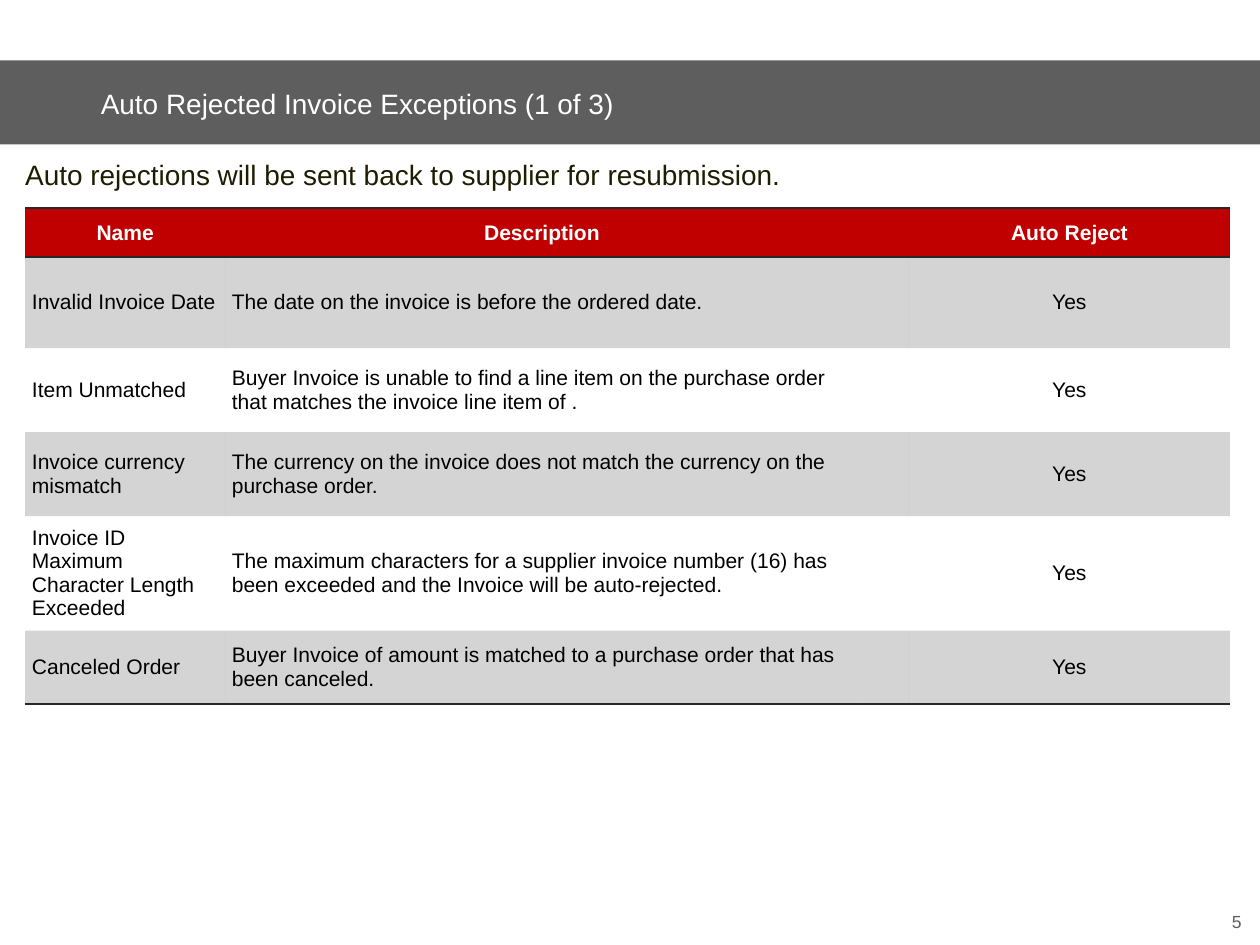
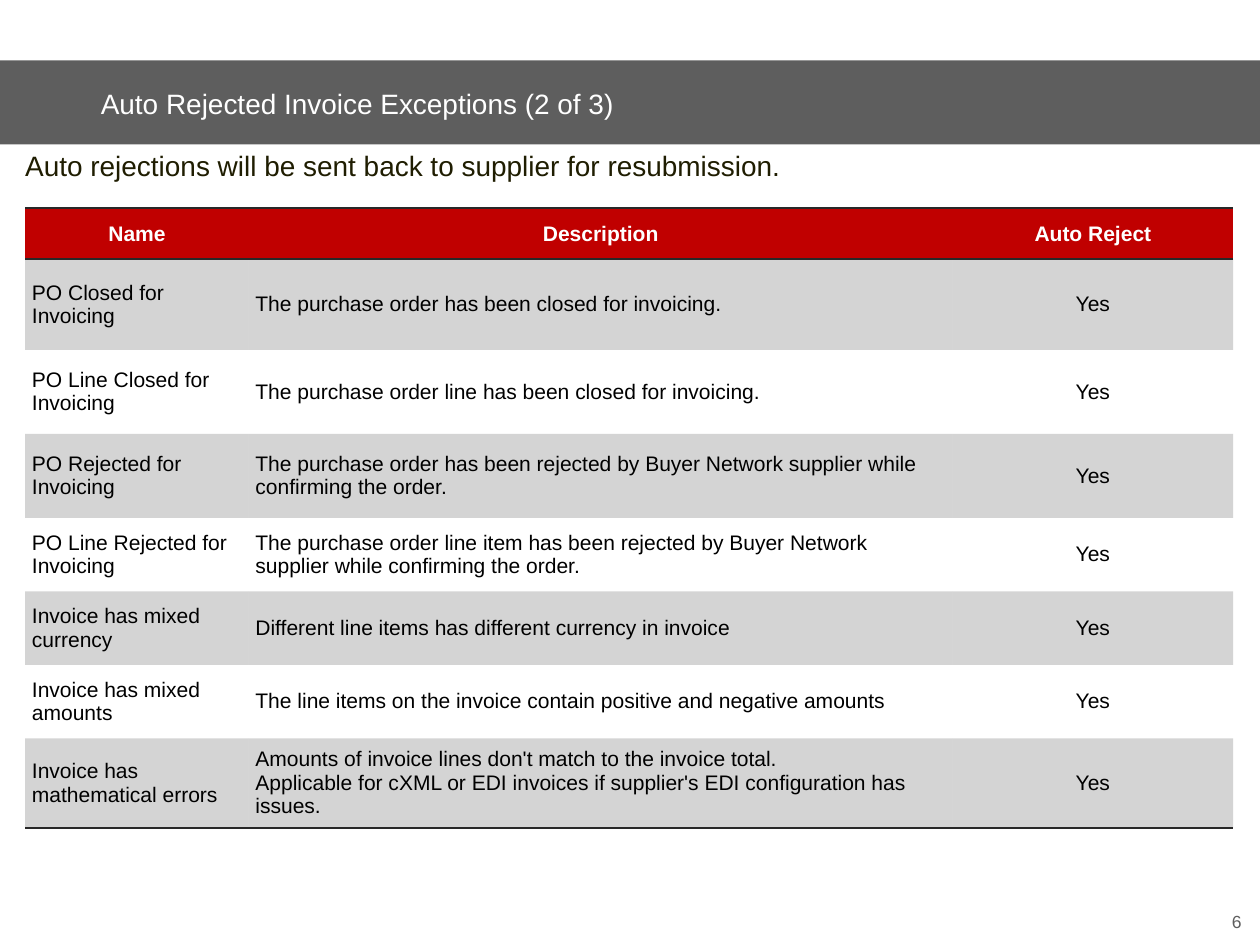
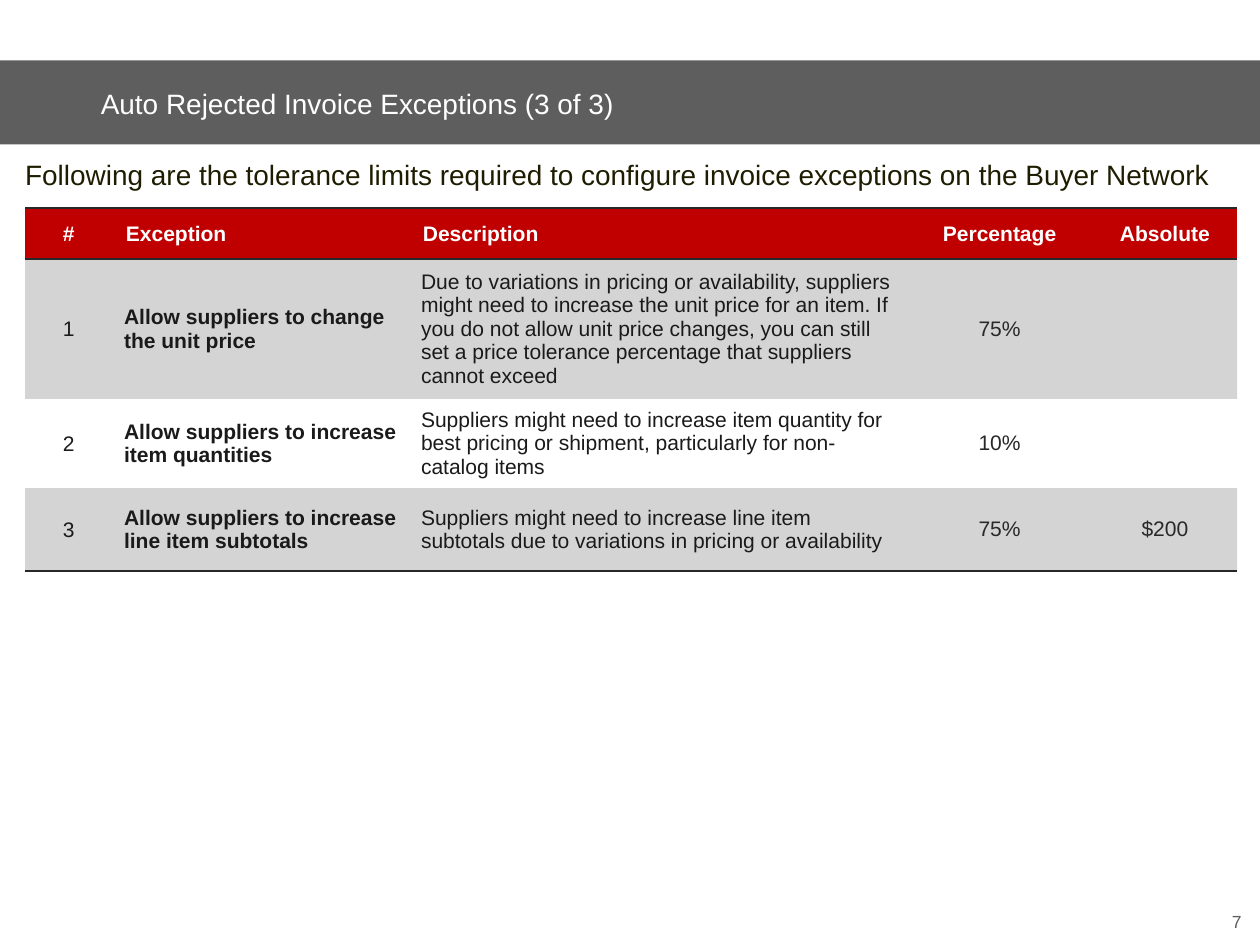
"""Builds three slides of tables on auto rejected invoice exceptions."""
import pptx
import pptx.dml.color
import pptx.enum.text
import pptx.oxml.ns
import pptx.util
from lxml import etree

Pt = pptx.util.Pt
RGBColor = pptx.dml.color.RGBColor
ALIGN = pptx.enum.text.PP_ALIGN
MIDDLE = pptx.enum.text.MSO_ANCHOR.MIDDLE
qn = pptx.oxml.ns.qn

GREY = RGBColor(0x5E, 0x5E, 0x5E)
WHITE = RGBColor(0xFF, 0xFF, 0xFF)
BLACK = RGBColor(0x00, 0x00, 0x00)
RED = RGBColor(0xC0, 0x00, 0x00)
DARK = RGBColor(0x28, 0x28, 0x28)
INK = RGBColor(0x1A, 0x1A, 0x1A)
OLIVE = RGBColor(0x1F, 0x1D, 0x01)

FONT = "Arial"
NO_STYLE = "{2D5ABB26-0587-4C30-8999-92F81FD0307C}"
ALIGNS = {"l": ALIGN.LEFT, "c": ALIGN.CENTER}
TIGHT = (0.7, 0.7, 0.7, 0)
EVEN = (2.9, 2.9, 2.9, 2.9)
LOOSE = (5.8, 5, 5.8, 5)
WIDE = (5, 2.9, 5, 2.9)
RESUBMIT = "Auto rejections will be sent back to supplier for resubmission."

SLIDES = [
    {
        "intro": RESUBMIT,
        "intro_top": 65,
        "cols": [85.7, 271.5, 21.6, 137.5],
        "heights": [21, 39, 36, 36, 46, 31.5],
        "aligns": ["cccc", "lllc"],
        "margins": [TIGHT, EVEN],
        "colors": [BLACK] * 4,
        "numbered": False,
        "rows": [
            ["Name", "Description", "", "Auto Reject"],
            ["Invalid Invoice Date", "The date on the invoice is before the ordered date.", "", "Yes"],
            ["Item Unmatched", "Buyer Invoice is unable to find a line item on the purchase order "
             "that matches the invoice line item of .", "", "Yes"],
            ["Invoice currency mismatch", "The currency on the invoice does not match the currency "
             "on the purchase order.", "", "Yes"],
            ["Invoice ID Maximum Character Length Exceeded", "The maximum characters for a supplier "
             "invoice number (16) has been exceeded and the Invoice will be auto-rejected.", "", "Yes"],
            ["Canceled Order", "Buyer Invoice of amount is matched to a purchase order that has "
             "been canceled.", "", "Yes"],
        ],
    },
    {
        "intro": RESUBMIT,
        "intro_top": 61,
        "cols": [95.8, 301.7, 120.2],
        "heights": [21.8, 39, 36, 36, 31.5, 31.5, 31.5, 36],
        "aligns": ["ccc", "llc"],
        "margins": [TIGHT, EVEN],
        "colors": [BLACK] * 3,
        "numbered": False,
        "rows": [
            ["Name", "Description", "Auto Reject"],
            ["PO Closed for Invoicing", "The purchase order has been closed for invoicing.", "Yes"],
            ["PO Line Closed for Invoicing", "The purchase order line has been closed for invoicing.", "Yes"],
            ["PO Rejected for Invoicing", "The purchase order has been rejected by Buyer Network "
             "supplier while confirming the order.", "Yes"],
            ["PO Line Rejected for Invoicing", "The purchase order line item has been rejected by "
             "Buyer Network supplier while confirming the order.", "Yes"],
            ["Invoice has mixed currency", "Different line items has different currency in invoice", "Yes"],
            ["Invoice has mixed amounts", "The line items on the invoice contain positive and "
             "negative amounts", "Yes"],
            ["Invoice has mathematical errors", "Amounts of invoice lines don't match to the invoice "
             "total.\vApplicable for cXML or EDI invoices if supplier's EDI configuration has issues.", "Yes"],
        ],
    },
    {
        "intro": "Following are the tolerance limits required to configure invoice exceptions "
                 "on the Buyer Network",
        "intro_top": 65,
        "cols": [37.4, 127.3, 213.1, 79.7, 62],
        "heights": [21.8, 56, 36, 35.5],
        "aligns": ["cllcc", "cllcc"],
        "margins": [LOOSE, WIDE],
        "colors": [INK, INK, INK, DARK, DARK],
        "numbered": True,
        "rows": [
            ["#", "Exception", "Description", "Percentage", "Absolute"],
            ["1", "Allow suppliers to change the unit price", "Due to variations in pricing or "
             "availability, suppliers might need to increase the unit price for an item. If you do "
             "not allow unit price changes, you can still set a price tolerance percentage that "
             "suppliers cannot exceed", "75%", ""],
            ["2", "Allow suppliers to increase item quantities", "Suppliers might need to increase "
             "item quantity for best pricing or shipment, particularly for non-catalog items", "10%", ""],
            ["3", "Allow suppliers to increase line item subtotals", "Suppliers might need to "
             "increase line item subtotals due to variations in pricing or availability", "75%", "$200"],
        ],
    },
]


def write(tf, text, size, color, margins, align=ALIGN.LEFT, spacing=None, bold=False):
    tf.text = text
    p = tf.paragraphs[0]
    p.alignment = align
    if spacing:
        p.line_spacing = spacing
    for r in p.runs:
        r.font.name = FONT
        r.font.size = Pt(size)
        r.font.bold = bold
        r.font.color.rgb = color
    if not text:
        p._p.get_or_add_endParaRPr().set("sz", str(size * 100))
    tf.word_wrap = True
    tf.margin_left, tf.margin_top, tf.margin_right, tf.margin_bottom = map(Pt, margins)
    tf.vertical_anchor = MIDDLE


def add_border(cell, side):
    ln = etree.SubElement(cell._tc.get_or_add_tcPr(), qn("a:" + side), w=str(Pt(1)))
    fill = etree.SubElement(ln, qn("a:solidFill"))
    etree.SubElement(fill, qn("a:srgbClr"), val=str(DARK))


prs = pptx.Presentation()
prs.slide_width, prs.slide_height = Pt(540), Pt(405)

for number, page in enumerate(SLIDES, 1):
    s = prs.slides.add_slide(prs.slide_layouts[5])

    title = s.shapes.title
    title.left, title.top, title.width, title.height = Pt(0), Pt(25.9), Pt(540), Pt(36)
    title.fill.solid()
    title.fill.fore_color.rgb = GREY
    write(title.text_frame, f"Auto Rejected Invoice Exceptions ({number} of {len(SLIDES)})",
          12, WHITE, (43.2, 7.2, 7.2, 3.6), spacing=0.8)
    title.text_frame.auto_size = pptx.enum.text.MSO_AUTO_SIZE.NONE

    sp = s.shapes.add_textbox(Pt(10.8), Pt(page["intro_top"]), Pt(515), Pt(21.6))
    write(sp.text_frame, page["intro"], 12, OLIVE, (0, 0, 0, 0), spacing=0.9)

    sp = s.shapes.add_textbox(Pt(448.6), Pt(391), Pt(83.5), Pt(8.6))
    write(sp.text_frame, str(number + 4), 7.5, GREY, (0, 0, 0, 0), ALIGN.RIGHT, 0.95)

    rows, cols, heights = page["rows"], page["cols"], page["heights"]
    table = s.shapes.add_table(len(rows), len(cols), Pt(10.8), Pt(89.2),
                               Pt(sum(cols)), Pt(sum(heights))).table
    table.horz_banding = False
    table._tbl.tblPr.find(qn("a:tableStyleId")).text = NO_STYLE
    for column, width in zip(table.columns, cols):
        column.width = Pt(width)

    for i, (row, height) in enumerate(zip(rows, heights)):
        table.rows[i].height = Pt(height)
        header = i == 0
        for j, text in enumerate(row):
            cell = table.cell(i, j)
            loose = page["numbered"] and (header or j == 0)
            margins = LOOSE if loose else page["margins"][0 if header else 1]
            write(cell.text_frame, text, 9, WHITE if header else page["colors"][j], (0, 0, 0, 0),
                  ALIGNS[page["aligns"][0 if header else 1][j]], 1.06 if loose else None,
                  header or (page["numbered"] and j == 1))
            cell.margin_left, cell.margin_top, cell.margin_right, cell.margin_bottom = map(Pt, margins)
            cell.vertical_anchor = MIDDLE
            if header:
                add_border(cell, "lnT")
            if header or i == len(rows) - 1:
                add_border(cell, "lnB")
            if header:
                cell.fill.solid()
                cell.fill.fore_color.rgb = RED
            elif i % 2:
                cell.fill.solid()
                cell.fill.fore_color.rgb = DARK
                color = cell._tc.tcPr.find(qn("a:solidFill")).find(qn("a:srgbClr"))
                etree.SubElement(color, qn("a:alpha"), val="20000")
            else:
                cell.fill.background()

prs.save("out.pptx")
